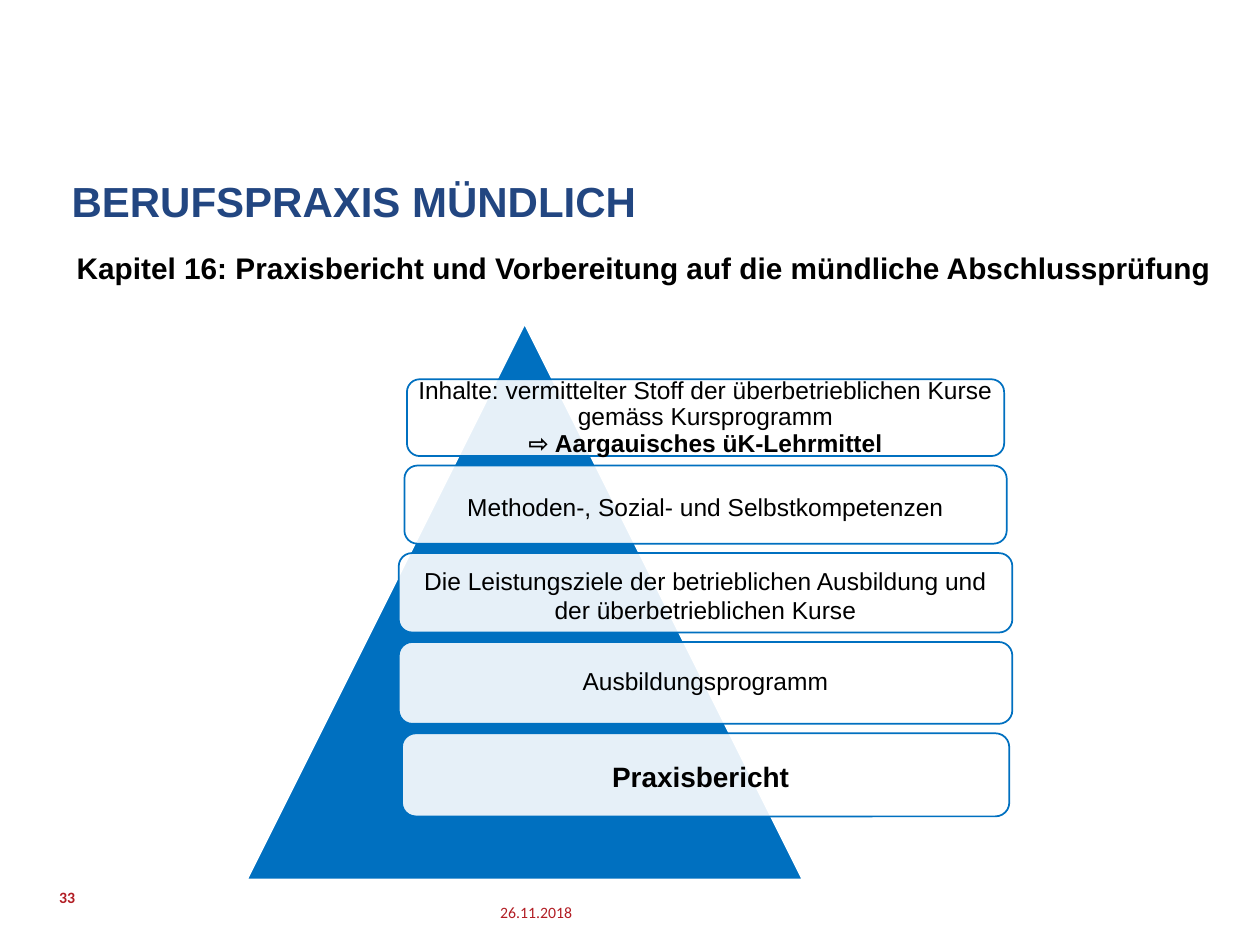
from dataclasses import dataclass
from typing import NamedTuple

from lxml.etree import SubElement
from pptx import Presentation
from pptx.dml.color import RGBColor
from pptx.enum.shapes import MSO_SHAPE
from pptx.enum.text import MSO_ANCHOR, PP_ALIGN
from pptx.oxml.ns import qn
from pptx.util import Emu, Inches, Pt


@dataclass(frozen=True)
class Theme:
    heading: str = "224681"
    accent: str = "0070C0"
    paper: str = "FFFFFF"
    ink: str = "000000"
    footer: str = "B21D24"
    body_font: str = "Arial"
    footer_font: str = "Calibri"
    title_size: int = 24
    subtitle_size: int = 17
    strong_size: int = 16
    card_size: int = 14
    footer_size: int = 9
    card_opacity: int = 90


class Area(NamedTuple):
    """A rectangle in grid columns and rows."""
    left: float
    top: float
    width: float
    height: float


@dataclass(frozen=True)
class Card:
    """One step of the pyramid; shifts move its text right and down."""
    lines: tuple[str, ...]
    width: float
    height: float
    size: int = Theme.card_size
    bold_lines: tuple[int, ...] = ()
    spacing: float = 0.9
    shift_right: float = 0
    shift_down: float = 0


THEME = Theme()
SLIDE_WIDTH, SLIDE_HEIGHT = Inches(10), Inches(7.5)
COLUMN, ROW = SLIDE_WIDTH / 100, SLIDE_HEIGHT / 75

PYRAMID = Area(19.6, 25.7, 44.1, 44.1)
CARD_CENTER, CARD_TOP, CARD_GAP, CARD_INSET = 56, 30.1, 0.75, 0.5
CARDS = (
    Card(("Inhalte: vermittelter Stoff der überbetrieblichen Kurse gemäss Kursprogramm",
          "⇨ Aargauisches üK-Lehrmittel"), 47.4, 6.1, bold_lines=(1,)),
    Card(("Methoden-, Sozial- und Selbstkompetenzen",), 47.8, 6.2, spacing=1, shift_down=0.2),
    Card(("Die Leistungsziele der betrieblichen Ausbildung und der überbetrieblichen Kurse",),
         48.7, 6.3, spacing=1, shift_down=0.2),
    Card(("Ausbildungsprogramm",), 48.7, 6.5),
    Card(("Praxisbericht",), 48.2, 6.6, size=THEME.strong_size, bold_lines=(0,),
         shift_right=-0.4, shift_down=0.3),
)


def place(area: Area) -> tuple[Emu, Emu, Emu, Emu]:
    return (Emu(round(area.left * COLUMN)), Emu(round(area.top * ROW)),
            Emu(round(area.width * COLUMN)), Emu(round(area.height * ROW)))


def write(shape, lines: tuple[str, ...], *, size: int, color: str = THEME.ink,
          font: str = THEME.body_font, bold_lines: tuple[int, ...] = (),
          align: PP_ALIGN = PP_ALIGN.LEFT, anchor: MSO_ANCHOR = MSO_ANCHOR.TOP,
          spacing: float = 1, wrap: bool = True,
          margins: tuple[float, float, float, float] = (1, 0.5, 1, 0.5)) -> None:
    """Write one paragraph; margins are left, top, right, bottom in grid units."""
    frame = shape.text_frame
    frame.word_wrap = wrap
    frame.vertical_anchor = anchor
    left, top, right, bottom = margins
    frame.margin_left, frame.margin_right = round(left * COLUMN), round(right * COLUMN)
    frame.margin_top, frame.margin_bottom = round(top * ROW), round(bottom * ROW)
    paragraph = frame.paragraphs[0]
    paragraph.alignment = align
    paragraph.line_spacing = spacing
    for index, line in enumerate(lines):
        if index:
            paragraph.add_line_break()
        run = paragraph.add_run()
        run.text = line
        run.font.name = font
        run.font.size = Pt(size)
        run.font.bold = index in bold_lines
        run.font.color.rgb = RGBColor.from_string(color)


def add_label(slide, area: Area, text: str, **text_format) -> None:
    write(slide.shapes.add_textbox(*place(area)), (text,), **text_format)


def add_filled(shapes, kind: MSO_SHAPE, area: Area, fill: str, line: str, opacity: int = 100):
    shape = shapes.add_shape(kind, *place(area))
    shape.shadow.inherit = False
    shape.fill.solid()
    shape.fill.fore_color.rgb = RGBColor.from_string(fill)
    shape.line.color.rgb = RGBColor.from_string(line)
    shape.line.width = Pt(1)
    if opacity < 100:
        color = shape.fill._xPr.find(qn("a:solidFill"))[0]
        SubElement(color, qn("a:alpha")).set("val", str(opacity * 1000))
    return shape


def add_card(shapes, card: Card, top: float) -> None:
    area = Area(CARD_CENTER - card.width / 2, top, card.width, card.height)
    shape = add_filled(shapes, MSO_SHAPE.ROUNDED_RECTANGLE, area, THEME.paper,
                       THEME.accent, THEME.card_opacity)
    # Centred text moves by half of the extra margin
    margins = (CARD_INSET + max(0, 2 * card.shift_right), 2 * card.shift_down,
               CARD_INSET + max(0, -2 * card.shift_right), 0)
    write(shape, card.lines, size=card.size, bold_lines=card.bold_lines,
          align=PP_ALIGN.CENTER, anchor=MSO_ANCHOR.MIDDLE, spacing=card.spacing,
          margins=margins)


def main() -> None:
    presentation = Presentation()
    presentation.slide_width, presentation.slide_height = SLIDE_WIDTH, SLIDE_HEIGHT
    slide = presentation.slides.add_slide(presentation.slide_layouts[6])

    # Headings
    add_label(slide, Area(4.7, 13.9, 76.4, 9.4), "BERUFSPRAXIS MÜNDLICH",
              size=THEME.title_size, color=THEME.heading, bold_lines=(0,), spacing=0.9)
    add_label(slide, Area(5.1, 19.3, 92.9, 3.9),
              "Kapitel 16: Praxisbericht und Vorbereitung auf die mündliche Abschlussprüfung",
              size=THEME.subtitle_size, bold_lines=(0,), wrap=False)

    # Pyramid with its stacked cards
    pyramid = slide.shapes.add_group_shape().shapes
    add_filled(pyramid, MSO_SHAPE.ISOSCELES_TRIANGLE, PYRAMID, THEME.accent, THEME.paper)
    top = CARD_TOP
    for card in CARDS:
        add_card(pyramid, card, top)
        top += card.height + CARD_GAP

    # Footer
    footer = dict(size=THEME.footer_size, color=THEME.footer, font=THEME.footer_font,
                  anchor=MSO_ANCHOR.MIDDLE, margins=(0, 0, 0, 0))
    add_label(slide, Area(28.7, 70.4, 16.7, 4), "26.11.2018", align=PP_ALIGN.RIGHT, **footer)
    add_label(slide, Area(4.7, 69.2, 22.5, 4), "33", bold_lines=(0,), **footer)

    presentation.save("out.pptx")


if __name__ == "__main__":
    main()
